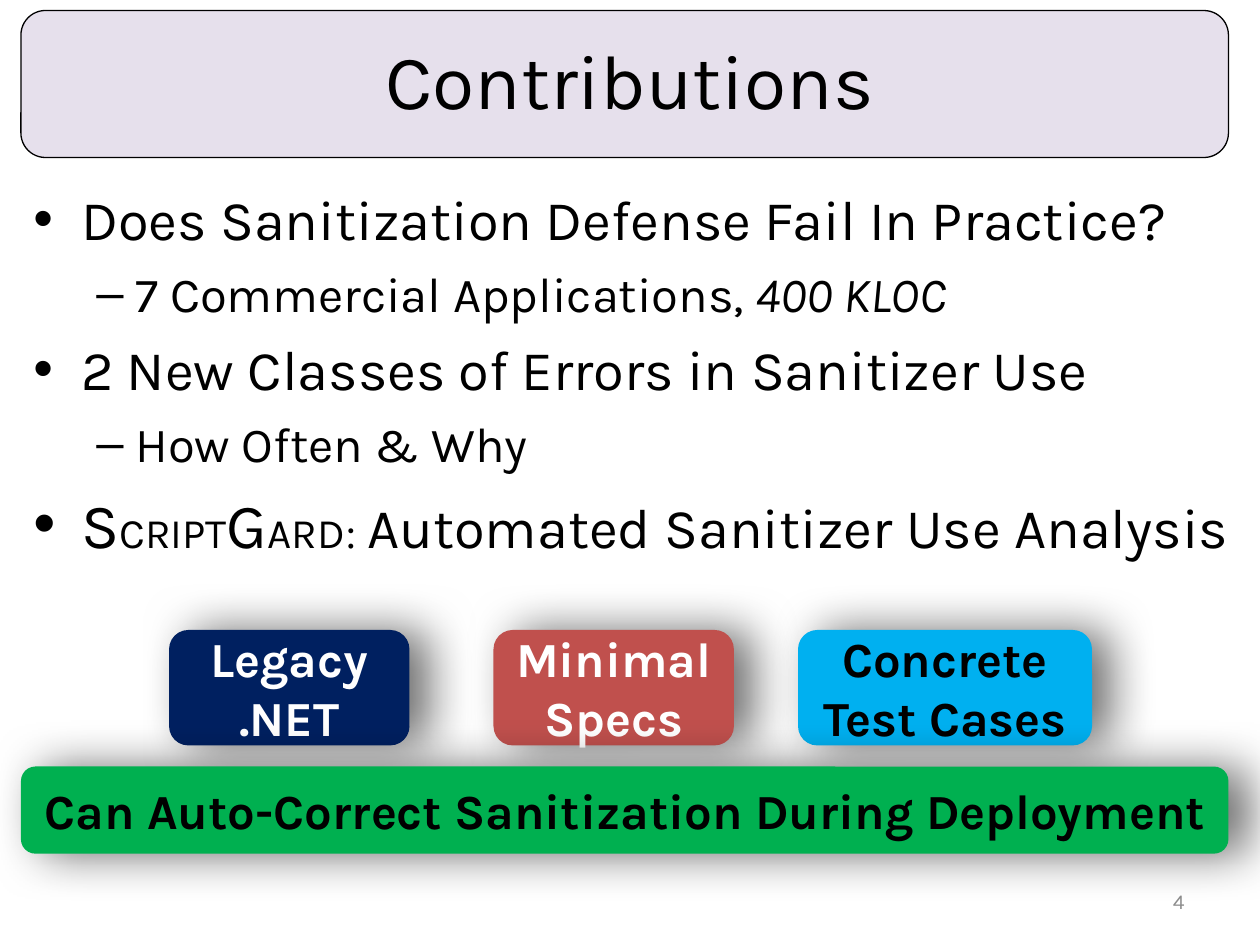
import pptx
import pptx.util
import pptx.dml.color
import pptx.enum.shapes
import pptx.enum.text
import pptx.oxml
import pptx.oxml.ns
import lxml.etree

Pt = pptx.util.Pt
Align = pptx.enum.text.PP_ALIGN
Anchor = pptx.enum.text.MSO_ANCHOR
UNIT = pptx.util.Inches(1) // 12  # grid: 120 columns by 90 rows


def color(text):
    return pptx.dml.color.RGBColor.from_string(text)


def assign(target, values):
    for name, value in values.items():
        setattr(target, name, value)


class Deck:
    font = "Karla"
    ink = "000000"

    def __init__(self):
        self.show = pptx.Presentation()
        assign(self.show, {"slide_width": 120 * UNIT, "slide_height": 90 * UNIT})
        self.slide = self.show.slides.add_slide(self.show.slide_layouts[6])

    def place(self, cells):
        return [round(cell * UNIT) for cell in cells]

    def letter(self, frame, lines, align=Align.LEFT, anchor=Anchor.MIDDLE, **style):
        """Fill a frame; each line is a list of (text, format) runs."""
        assign(frame, {"word_wrap": True, "vertical_anchor": anchor})
        for index, runs in enumerate(lines):
            para = frame.paragraphs[0] if index == 0 else frame.add_paragraph()
            para.alignment = align
            for text, extra in runs:
                run = para.add_run()
                run.text = text
                form = {"name": self.font, "color": self.ink, **style, **extra}
                run.font.fill.solid()
                run.font.fill.fore_color.rgb = color(form.pop("color"))
                assign(run.font, form)

    def text(self, cells, lines, **style):
        box = self.slide.shapes.add_textbox(*self.place(cells))
        self.letter(box.text_frame, lines, **style)
        return box.text_frame

    def panel(self, cells, fill, line=None):
        kind = pptx.enum.shapes.MSO_SHAPE.ROUNDED_RECTANGLE
        shape = self.slide.shapes.add_shape(kind, *self.place(cells))
        shape.shadow.inherit = False
        shape.fill.solid()
        shape.fill.fore_color.rgb = color(fill)
        if line:
            shape.line.color.rgb = color(line)
            shape.line.width = Pt(0.75)
        else:
            shape.line.fill.background()
        return shape

    def card(self, cells, fill, ink, *words):
        shape = self.panel(cells, fill)
        self.shade(shape)
        lines = [[(word, {})] for word in words]
        self.letter(shape.text_frame, lines, align=Align.CENTER,
                    size=Pt(28), bold=True, color=ink)

    def shade(self, shape):
        """Cast a soft shadow to the right."""
        qn = pptx.oxml.ns.qn
        effects = shape.element.spPr.find(qn("a:effectLst"))
        shadow = lxml.etree.SubElement(
            effects, qn("a:outerShdw"), blurRad=str(Pt(27)), dist=str(Pt(11)),
            dir="0", algn="ctr", rotWithShape="0")
        tint = lxml.etree.SubElement(shadow, qn("a:srgbClr"), val=self.ink)
        lxml.etree.SubElement(tint, qn("a:alpha"), val="56000")

    def bullets(self, cells, items):
        """Add (level, runs) items with a mark and hanging indent per level."""
        qn = pptx.oxml.ns.qn
        levels = [("•", 0.38, 0.38, 32), ("–", 0.81, 0.31, 28)]
        lines = [[(text, {"size": Pt(levels[level][3]), **extra})
                  for text, extra in runs] for level, runs in items]
        frame = self.text(cells, lines, anchor=Anchor.TOP)
        for index, (para, (level, runs)) in enumerate(zip(frame.paragraphs, items)):
            mark, left, hang, size = levels[level]
            assign(para, {"level": level,
                          "space_before": Pt(0.23 * size if index else 2)})
            props = para._p.get_or_add_pPr()
            props.set("marL", str(pptx.util.Inches(left)))
            props.set("indent", str(-pptx.util.Inches(hang)))
            lxml.etree.SubElement(props, qn("a:buFont"), typeface="Arial")
            lxml.etree.SubElement(props, qn("a:buChar"), char=mark)


def main():
    deck = Deck()
    deck.panel((2, 1, 115, 14), "E6E0EC", deck.ink)
    deck.text((6, 0, 108, 15), [[("Contributions", {})]],
              align=Align.CENTER, size=Pt(44))

    large, small = {"size": Pt(36)}, {"size": Pt(24)}
    deck.bullets((2, 17, 117, 43), [
        (0, [("Does Sanitization Defense Fail In Practice?", {})]),
        (1, [("7 Commercial Applications, ", {}), ("400 KLOC", {"italic": True})]),
        (0, [("2 New Classes of Errors in Sanitizer Use", {})]),
        (1, [("How Often & Why", {})]),
        (0, [("S", large), ("CRIPT", small), ("G", large), ("ARD", small),
             (": ", {**small, "name": "Times New Roman"}),
             ("Automated Sanitizer Use Analysis", {})]),
    ])
    deck.text((86, 83.4, 28, 4.8), [[("4", {})]],
              align=Align.RIGHT, size=Pt(12), color="8C8C8C")

    white = "FFFFFF"
    for left, width, fill, ink, words in [
            (16.1, 22.9, "002060", white, ("Legacy", ".NET")),
            (47, 22.9, "C0504D", white, ("Minimal", "Specs")),
            (76, 28, "00B0F0", deck.ink, ("Concrete", "Test Cases"))]:
        deck.card((left, 60, width, 11), fill, ink, *words)
    deck.card((2, 73, 115, 8.3), "00B050", deck.ink,
              "Can Auto-Correct Sanitization During Deployment")
    deck.show.save("out.pptx")


if __name__ == "__main__":
    main()
